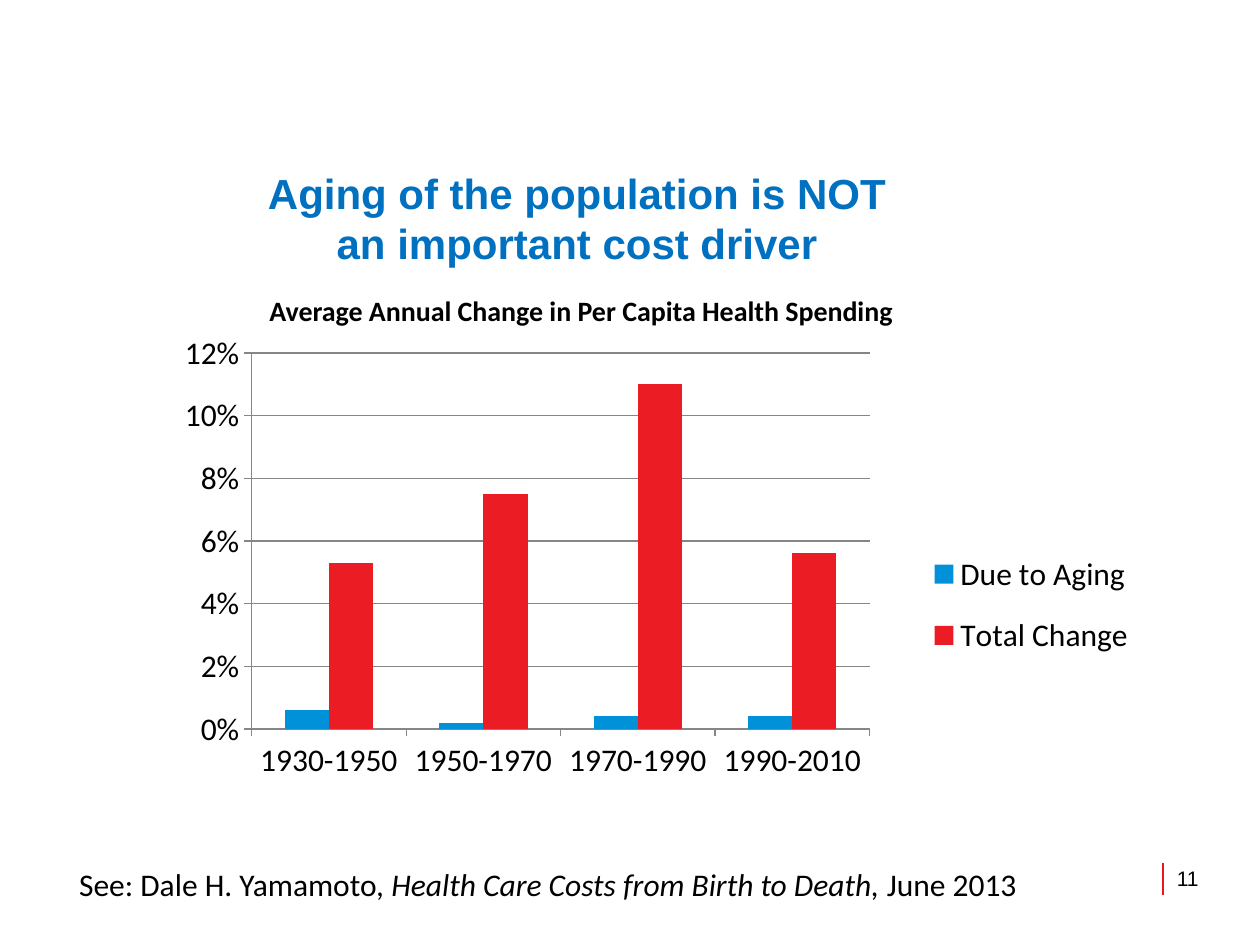
import pptx
import pptx.chart.data
import pptx.dml.color
import pptx.enum.chart
import pptx.enum.shapes
import pptx.enum.text
import pptx.util
from lxml import etree
from pptx.util import Inches

ALIGN = pptx.enum.text.PP_ALIGN
ANCHOR = pptx.enum.text.MSO_ANCHOR


def color(value):
    return pptx.dml.color.RGBColor.from_string(value)


def set_layout(parent, position, inner=False):
    for old in parent.findall(pptx.oxml.ns.qn("c:layout")):
        parent.remove(old)
    layout = parent.makeelement(pptx.oxml.ns.qn("c:layout"))
    manual = etree.SubElement(layout, pptx.oxml.ns.qn("c:manualLayout"))
    settings = [("layoutTarget", "inner")] if inner else []
    settings += [("xMode", "edge"), ("yMode", "edge")]
    settings += zip("xywh", position)
    for name, value in settings:
        etree.SubElement(manual, pptx.oxml.ns.qn(f"c:{name}")).set("val", str(value))
    parent.insert(1 if parent.tag.endswith("legend") else 0, layout)


class SlideBuilder:
    """Holds the style and the current slide, and adds its elements."""

    heading_font = "Arial"
    body_font = "Calibri"
    text_color = "000000"
    title_color = "0070C0"
    accent = "EC161F"
    axis_color = "868686"

    def __init__(self, deck):
        self.slide = deck.slides.add_slide(deck.slide_layouts[5])

    def format_font(self, font, size, name=None, value=None, bold=False):
        font.size = pptx.util.Pt(size)
        font.name = name or self.body_font
        font.bold = bold
        font.color.rgb = color(value or self.text_color)

    def set_insets(self, frame):
        frame.margin_left = frame.margin_top = 0
        frame.margin_right, frame.margin_bottom = Inches(0.1), Inches(0.05)
        frame.vertical_anchor = ANCHOR.MIDDLE

    def title(self, text, left, top, width, height):
        title = self.slide.shapes.title
        title.left, title.top = Inches(left), Inches(top)
        title.width, title.height = Inches(width), Inches(height)
        frame = title.text_frame
        frame.text = text
        frame.word_wrap = True
        frame.auto_size = pptx.enum.text.MSO_AUTO_SIZE.NONE
        self.set_insets(frame)
        para = frame.paragraphs[0]
        para.alignment = ALIGN.CENTER
        for span in para.runs:
            self.format_font(span.font, 24, self.heading_font, self.title_color, True)

    def text(self, spans, left, top, width, height, size, name=None, bold=False):
        box = self.slide.shapes.add_textbox(
            Inches(left), Inches(top), Inches(width), Inches(height))
        frame = box.text_frame
        frame.word_wrap = True
        for text, italic in spans:
            span = frame.paragraphs[0].add_run()
            span.text = text
            self.format_font(span.font, size, name, bold=bold)
            span.font.italic = italic
        return frame

    def page_number(self, number, left, top, width, height):
        frame = self.text([(number, False)], left, top, width, height, 12,
                          self.heading_font)
        self.set_insets(frame)
        frame.paragraphs[0].alignment = ALIGN.RIGHT

    def line(self, left, top, right, bottom):
        line = self.slide.shapes.add_connector(
            pptx.enum.shapes.MSO_CONNECTOR.STRAIGHT,
            Inches(left), Inches(top), Inches(right), Inches(bottom))
        line.line.color.rgb = color(self.accent)
        line.line.width = pptx.util.Pt(1.5)
        etree.SubElement(line._element.spPr, pptx.oxml.ns.qn("a:effectLst"))

    def column_chart(self, categories, series, left, top, width, height):
        data = pptx.chart.data.CategoryChartData(number_format="0%")
        data.categories = categories
        for name, values, _ in series:
            data.add_series(name, values)
        chart = self.slide.shapes.add_chart(
            pptx.enum.chart.XL_CHART_TYPE.COLUMN_CLUSTERED,
            Inches(left), Inches(top), Inches(width), Inches(height), data).chart
        self.format_font(chart.font, 18)
        chart.has_title = False

        plot = chart.plots[0]
        plot.gap_width, plot.overlap = 150, 0
        plot.vary_by_categories = False
        for columns, (_, _, fill) in zip(plot.series, series):
            columns.format.fill.solid()
            columns.format.fill.fore_color.rgb = color(fill)

        values = chart.value_axis
        values.minimum_scale, values.maximum_scale, values.major_unit = 0, 0.12, 0.02
        values.tick_labels.number_format = "0%"
        values.tick_labels.number_format_is_linked = False
        values.has_major_gridlines = True
        for axis in (chart.category_axis, values):
            axis.major_tick_mark = pptx.enum.chart.XL_TICK_MARK.OUTSIDE
        for part in (chart.category_axis, values, values.major_gridlines):
            part.format.line.color.rgb = color(self.axis_color)
            part.format.line.width = pptx.util.Pt(0.75)

        chart.has_legend = True
        chart.legend.position = pptx.enum.chart.XL_LEGEND_POSITION.RIGHT
        chart.legend.include_in_layout = False
        set_layout(chart.legend._element, (0.76, 0.37, 0.23, 0.26))
        set_layout(chart._chartSpace.chart.plotArea, (0.113, 0.05, 0.604, 0.672), True)


def main():
    deck = pptx.Presentation()
    deck.slide_width, deck.slide_height = Inches(10), Inches(7.5)
    builder = SlideBuilder(deck)
    builder.line(9.23, 6.85, 9.23, 7.1)
    builder.title("Aging of the population is NOT\van important cost driver",
                  0.53, 1.29, 8.2, 0.93)
    builder.page_number("11", 9.22, 6.79, 0.39, 0.4)
    builder.text([("See: Dale H. Yamamoto, ", False),
                  ("Health Care Costs from Birth to Death, ", True),
                  ("June 2013", False)], 0.53, 6.82, 8.36, 0.4, 18)
    builder.column_chart(
        ["1930-1950", "1950-1970", "1970-1990", "1990-2010"],
        [("Due to Aging", (0.006, 0.002, 0.004, 0.004), "0091D9"),
         ("Total Change", (0.053, 0.075, 0.11, 0.056), "EC1C24")],
        1.08, 2.58, 8.12, 4.44)
    builder.text([("Average Annual Change in Per Capita Health Spending", False)],
                 2.04, 2.28, 5.2, 0.43, 16, bold=True)
    deck.save("out.pptx")


if __name__ == "__main__":
    main()
